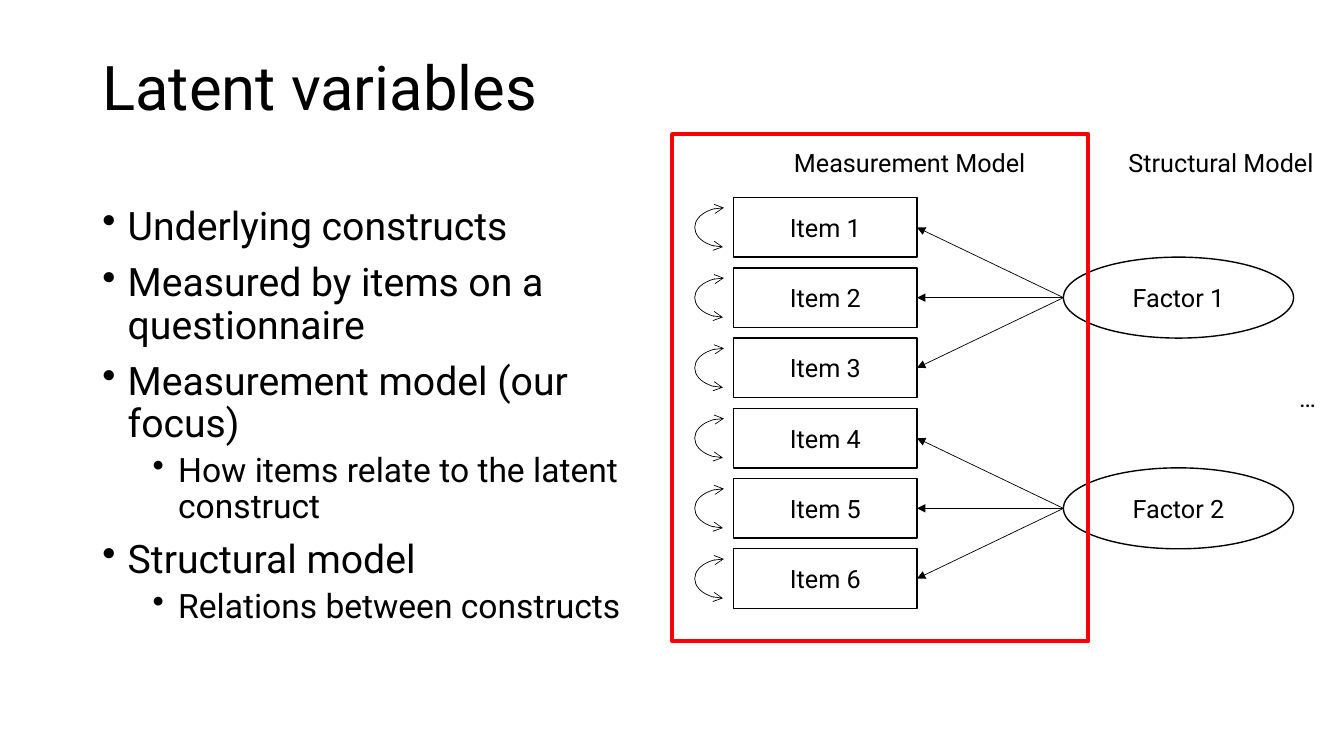
from dataclasses import dataclass

from lxml import etree
from pptx import Presentation
from pptx.dml.color import RGBColor
from pptx.enum.shapes import MSO_CONNECTOR, MSO_SHAPE
from pptx.enum.text import MSO_ANCHOR, PP_ALIGN
from pptx.oxml.ns import qn
from pptx.shapes.autoshape import Shape
from pptx.shapes.connector import Connector
from pptx.slide import Slide
from pptx.text.text import _Paragraph
from pptx.util import Cm, Pt

BLACK = RGBColor(0x00, 0x00, 0x00)
RED = RGBColor(0xFF, 0x00, 0x00)
FONT_NAME = "Roboto"
RECTANGLE = MSO_SHAPE.RECTANGLE
ELLIPSE = MSO_SHAPE.OVAL
ARC = MSO_SHAPE.ARC
STRAIGHT = MSO_CONNECTOR.STRAIGHT
MIDDLE = MSO_ANCHOR.MIDDLE
TOP = MSO_ANCHOR.TOP
CENTER = PP_ALIGN.CENTER
RIGHT_SIDE = 3

ITEM_COUNT = 6
ITEMS_PER_FACTOR = 3
ITEM_LEFT, ITEM_TOP, ITEM_WIDTH, ITEM_HEIGHT = 18.49, 4.98, 4.62, 1.5
ITEM_PITCH = 1.77
FACTOR_LEFT, FACTOR_WIDTH, FACTOR_HEIGHT = 26.8, 5.8, 2.04
ARC_LEFT, ARC_WIDTH, ARC_HEIGHT = 17.75, 0.99, 1.47


@dataclass(frozen=True)
class Box:
    left: float
    top: float
    width: float
    height: float


@dataclass(frozen=True)
class Bullet:
    text: str
    level: int = 0


@dataclass(frozen=True)
class BulletStyle:
    size: int
    space_before: int
    indent: float


@dataclass(frozen=True)
class Label:
    text: str
    box: Box
    size: int = 18
    anchor: MSO_ANCHOR = TOP
    line_spacing: float = 1.0


BULLET_HANGING = 0.64
BULLET_STYLES = [BulletStyle(28, 10, 0.64), BulletStyle(24, 5, 1.91)]
BODY_BOX = Box(2.33, 5.08, 13.77, 12.09)
FRAME_BOX = Box(16.94, 3.38, 10.49, 12.78)
BULLETS = [
    Bullet("Underlying constructs"),
    Bullet("Measured by items on a questionnaire"),
    Bullet("Measurement model (our focus)"),
    Bullet("How items relate to the latent construct", 1),
    Bullet("Structural model"),
    Bullet("Relations between constructs", 1),
]
LABELS = [
    Label("Latent variables", Box(2.33, 0.43, 29.21, 3.68), 44, MIDDLE, 0.9),
    Label("…", Box(32.49, 9.5, 1.37, 1.02)),
    Label("Measurement Model", Box(19.76, 3.58, 6.71, 1.02)),
    Label("Structural Model", Box(28.19, 3.58, 6.71, 1.02)),
]


def style_font(paragraph: _Paragraph, size: int) -> None:
    paragraph.font.name = FONT_NAME
    paragraph.font.size = Pt(size)
    paragraph.font.color.rgb = BLACK


def add_text_box(slide: Slide, box: Box) -> Shape:
    shape = slide.shapes.add_textbox(
        Cm(box.left), Cm(box.top), Cm(box.width), Cm(box.height)
    )
    shape.text_frame.word_wrap = True
    return shape


def add_label(slide: Slide, label: Label) -> None:
    text_frame = add_text_box(slide, label.box).text_frame
    text_frame.vertical_anchor = label.anchor
    paragraph = text_frame.paragraphs[0]
    paragraph.text = label.text
    paragraph.line_spacing = label.line_spacing
    style_font(paragraph, label.size)


def add_bullets(slide: Slide, box: Box, bullets: list[Bullet]) -> None:
    text_frame = add_text_box(slide, box).text_frame
    for index, bullet in enumerate(bullets):
        paragraph = text_frame.add_paragraph() if index else text_frame.paragraphs[0]
        style = BULLET_STYLES[bullet.level]
        paragraph.text = bullet.text
        paragraph.level = bullet.level
        paragraph.line_spacing = 0.9
        paragraph.space_before = Pt(style.space_before)
        style_font(paragraph, style.size)
        properties = paragraph._p.get_or_add_pPr()
        properties.set("marL", str(Cm(style.indent)))
        properties.set("indent", str(-Cm(BULLET_HANGING)))
        character = etree.Element(qn("a:buChar"), char="•")
        properties.find(qn("a:defRPr")).addprevious(character)


def add_outline(
    slide: Slide,
    kind: MSO_SHAPE,
    box: Box,
    text: str = "",
    color: RGBColor = BLACK,
    line_width: float = 1,
) -> Shape:
    shape = slide.shapes.add_shape(
        kind, Cm(box.left), Cm(box.top), Cm(box.width), Cm(box.height)
    )
    shape.shadow.inherit = False
    shape.fill.background()
    shape.line.color.rgb = color
    shape.line.width = Pt(line_width)
    if text:
        shape.text_frame.vertical_anchor = MIDDLE
        paragraph = shape.text_frame.paragraphs[0]
        paragraph.text = text
        paragraph.alignment = CENTER
        style_font(paragraph, 18)
    return shape


def add_arrowhead(shape: Shape | Connector, end: str, kind: str) -> None:
    etree.SubElement(shape.line._get_or_add_ln(), qn(f"a:{end}"), type=kind)


def add_loading_arrow(slide: Slide, factor: Shape, item: Shape) -> None:
    factor_middle = factor.top + factor.height // 2
    connector = slide.shapes.add_connector(
        STRAIGHT, factor.left, factor_middle, item.left + item.width, factor_middle
    )
    connector.end_connect(item, RIGHT_SIDE)
    connector.line.color.rgb = BLACK
    connector.line.width = Pt(0.5)
    add_arrowhead(connector, "tailEnd", "triangle")
    etree.SubElement(connector._element.spPr, qn("a:effectLst"))


def add_residual_arc(slide: Slide, item_top: float) -> None:
    top = item_top + (ITEM_HEIGHT - ARC_HEIGHT) / 2
    arc = add_outline(
        slide, ARC, Box(ARC_LEFT, top, ARC_WIDTH, ARC_HEIGHT), line_width=0.5
    )
    arc.rotation = 270
    arc.adjustments[0] = 109.74
    arc.adjustments[1] = 0
    add_arrowhead(arc, "headEnd", "arrow")
    add_arrowhead(arc, "tailEnd", "arrow")


def add_factor_model(slide: Slide) -> None:
    item_tops = [ITEM_TOP + index * ITEM_PITCH for index in range(ITEM_COUNT)]
    items = [
        add_outline(
            slide, RECTANGLE, Box(ITEM_LEFT, top, ITEM_WIDTH, ITEM_HEIGHT), f"Item {number}"
        )
        for number, top in enumerate(item_tops, 1)
    ]
    for number, first in enumerate(range(0, ITEM_COUNT, ITEMS_PER_FACTOR), 1):
        middle_top = item_tops[first + ITEMS_PER_FACTOR // 2]
        factor_top = middle_top + (ITEM_HEIGHT - FACTOR_HEIGHT) / 2
        factor_box = Box(FACTOR_LEFT, factor_top, FACTOR_WIDTH, FACTOR_HEIGHT)
        factor = add_outline(slide, ELLIPSE, factor_box, f"Factor {number}")
        for item in items[first:first + ITEMS_PER_FACTOR]:
            add_loading_arrow(slide, factor, item)
    for top in item_tops:
        add_residual_arc(slide, top)


def main() -> None:
    presentation = Presentation()
    presentation.slide_width = Cm(33.87)
    presentation.slide_height = Cm(19.05)
    slide = presentation.slides.add_slide(presentation.slide_layouts[6])
    add_bullets(slide, BODY_BOX, BULLETS)
    add_factor_model(slide)
    for label in LABELS:
        add_label(slide, label)
    add_outline(slide, RECTANGLE, FRAME_BOX, color=RED, line_width=3)
    presentation.save("out.pptx")


if __name__ == "__main__":
    main()
